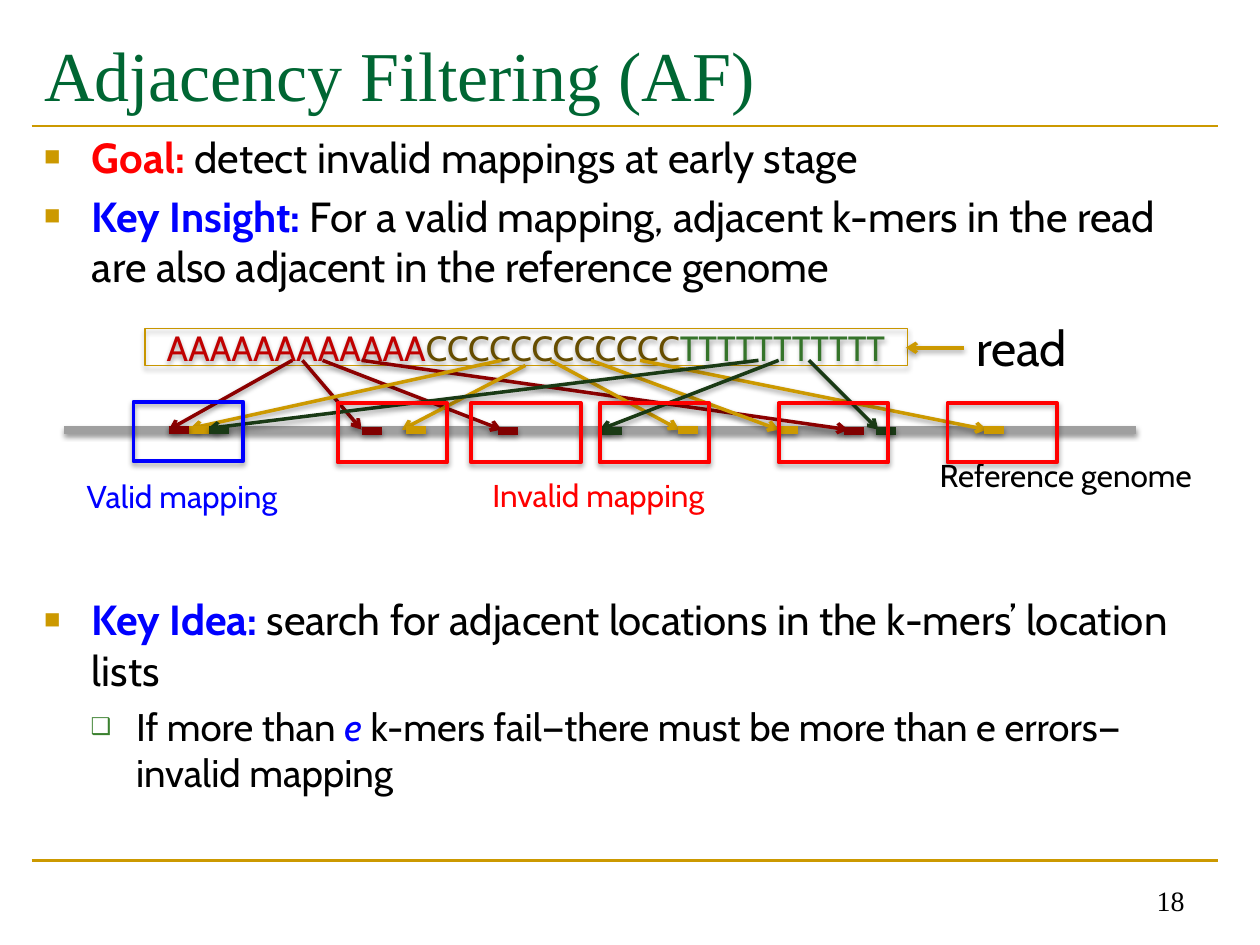
from dataclasses import dataclass

from lxml.etree import SubElement
from pptx import Presentation
from pptx.dml.color import RGBColor
from pptx.enum.shapes import MSO_CONNECTOR, MSO_SHAPE
from pptx.enum.text import MSO_ANCHOR, MSO_AUTO_SIZE, PP_ALIGN
from pptx.oxml.ns import qn
from pptx.util import Pt

EMU_PER_PX = 9144


@dataclass(frozen=True)
class Theme:
    title_font: str = "Times New Roman"
    body_font: str = "Cabin"
    title_size: float = 40
    body_size: float = 24
    sub_size: float = 22
    read_size: float = 20
    read_label_size: float = 28
    label_size: float = 18
    number_size: float = 16
    title: str = "006633"
    black: str = "000000"
    red: str = "FF0000"
    blue: str = "0000FF"
    gold: str = "CC9900"
    read_border: str = "C89600"
    gray: str = "9F9F9F"
    bullet_green: str = "3B812F"
    letter_a: str = "C00000"
    letter_c: str = "664D00"
    letter_t: str = "35742A"
    arrow_red: str = "8C0000"
    kmer_red: str = "800000"
    green: str = "1A3A15"


THEME = Theme()
BOX_WIDTH, BOX_HEIGHT = 87, 47
KMER_WIDTH = 16
GENOME_Y = 341

ARROWS = {
    THEME.arrow_red: [(232, 286, 134, 341), (240, 286, 287, 341),
                      (256, 286, 398, 341), (287, 286, 673, 341)],
    THEME.gold: [(398, 286, 151, 340), (417, 290, 319, 341), (437, 286, 539, 341),
                 (469, 286, 618, 341), (508, 286, 783, 341)],
    THEME.green: [(602, 286, 165, 340), (618, 286, 476, 341), (642, 286, 697, 341)],
}
KMERS = {
    THEME.gold: [(322, 341), (538, 341), (617, 341), (781, 341), (150, 341)],
    THEME.green: [(166, 341), (478, 342), (695, 342)],
    THEME.kmer_red: [(134, 341), (287, 342), (395, 342), (670, 342)],
}
INVALID_LEFTS = [268, 374, 476, 618, 752]


def px(*lengths):
    return [length * EMU_PER_PX for length in lengths]


def apply_format(target, values):
    for name, value in values.items():
        setattr(target, name, value)


def add_span(para, text, size, color, font=THEME.body_font, bold=False, italic=False):
    span = para.add_run()
    span.text = text
    apply_format(span.font, {"name": font, "size": Pt(size), "bold": bold, "italic": italic})
    span.font.color.rgb = RGBColor.from_string(color)


def add_effects(item, opacity=None, distance=1.6):
    effects = SubElement(item._element.spPr, qn("a:effectLst"))
    if opacity is None:
        return
    shadow = SubElement(effects, qn("a:outerShdw"), blurRad=str(Pt(3.1)),
                        dist=str(Pt(distance)), dir="5400000", rotWithShape="0")
    color = SubElement(shadow, qn("a:srgbClr"), val=THEME.black)
    SubElement(color, qn("a:alpha"), val=str(opacity * 1000))


def add_line(page, points, color, width, arrow=False, shadow=True):
    line = page.shapes.add_connector(MSO_CONNECTOR.STRAIGHT, *px(*points))
    line.line.color.rgb = RGBColor.from_string(color)
    line.line.width = Pt(width)
    if arrow:
        SubElement(line._element.spPr.find(qn("a:ln")), qn("a:tailEnd"), type="arrow")
    add_effects(line, 38 if shadow else None)


def add_frame(page, bounds, color, width):
    box = page.shapes.add_shape(MSO_SHAPE.RECTANGLE, *px(*bounds))
    box.fill.background()
    box.line.color.rgb = RGBColor.from_string(color)
    box.line.width = Pt(width)
    add_effects(box, 35, 1.8)
    return box


def add_label(page, bounds, text, size, color):
    box = page.shapes.add_textbox(*px(*bounds))
    apply_format(box.text_frame, {"word_wrap": False,
                                  "auto_size": MSO_AUTO_SIZE.SHAPE_TO_FIT_TEXT})
    add_span(box.text_frame.paragraphs[0], text, size, color)


def place(box, bounds):
    apply_format(box, dict(zip(("left", "top", "width", "height"), px(*bounds))))


def add_bullet(para, char, color, percent, indent, hanging):
    properties = para._p.get_or_add_pPr()
    left, first = px(indent, -hanging)
    properties.set("marL", str(left))
    properties.set("indent", str(first))
    bullet_color = SubElement(properties, qn("a:buClr"))
    SubElement(bullet_color, qn("a:srgbClr"), val=color)
    SubElement(properties, qn("a:buSzPct"), val=str(percent * 1000))
    SubElement(properties, qn("a:buChar"), char=char)


def fill_title(page):
    title = page.shapes.title
    place(title, (25, 17, 942, 83))
    apply_format(title.text_frame, {"vertical_anchor": MSO_ANCHOR.MIDDLE,
                                    "auto_size": MSO_AUTO_SIZE.NONE})
    para = title.text_frame.paragraphs[0]
    para.alignment = PP_ALIGN.LEFT
    add_span(para, "Adjacency Filtering (AF)", THEME.title_size, THEME.title, THEME.title_font)


def fill_body(page):
    body = page.placeholders[1]
    place(body, (25, 99, 942, 584))
    frame = body.text_frame
    apply_format(frame, {"vertical_anchor": MSO_ANCHOR.TOP, "auto_size": MSO_AUTO_SIZE.NONE})
    points = [
        ("Goal: ", THEME.red, "detect invalid mappings at early stage", 5),
        ("Key Insight: ", THEME.blue, "For a valid mapping, adjacent k-mers in the read "
         "are also adjacent in the reference genome", 5),
        ("Key Idea: ", THEME.blue,
         "search for adjacent locations in the k-mers’ location lists", 173),
    ]
    for index, (lead, color, text, gap) in enumerate(points):
        para = frame.add_paragraph() if index else frame.paragraphs[0]
        para.space_before = Pt(gap)
        add_bullet(para, "■", THEME.gold, 65, 38, 38)
        add_span(para, lead, THEME.body_size, color, bold=True)
        add_span(para, text, THEME.body_size, THEME.black)
    detail = frame.add_paragraph()
    apply_format(detail, {"level": 1, "space_before": Pt(5)})
    add_bullet(detail, "❑", THEME.bullet_green, 60, 73, 36)
    add_span(detail, "If more than ", THEME.sub_size, THEME.black)
    add_span(detail, "e ", THEME.sub_size, THEME.blue, italic=True)
    add_span(detail, "k-mers fail—there must be more than e errors—invalid mapping",
             THEME.sub_size, THEME.black)


def add_page_number(page):
    box = page.shapes.add_textbox(*px(717, 683, 233, 50))
    apply_format(box.text_frame, {"word_wrap": True, "vertical_anchor": MSO_ANCHOR.BOTTOM})
    para = box.text_frame.paragraphs[0]
    para.alignment = PP_ALIGN.RIGHT
    add_span(para, "18", THEME.number_size, THEME.black, THEME.title_font)


def add_read(page):
    box = add_frame(page, (115, 261, 605, 29), THEME.read_border, 0.75)
    margins = dict.fromkeys(("margin_left", "margin_top", "margin_right", "margin_bottom"), 0)
    apply_format(box.text_frame, {"vertical_anchor": MSO_ANCHOR.MIDDLE, **margins})
    para = box.text_frame.paragraphs[0]
    para.alignment = PP_ALIGN.CENTER
    for letter, count, color in (("A", 12, THEME.letter_a), ("C", 12, THEME.letter_c),
                                 ("T", 11, THEME.letter_t)):
        add_span(para, letter * count, THEME.read_size, color)
    add_label(page, (765, 247, 97, 57), "read", THEME.read_label_size, THEME.black)
    add_line(page, (765, 276, 719, 276), THEME.gold, 2, arrow=True)


def add_mappings(page):
    add_line(page, (51, GENOME_Y, 902, GENOME_Y), THEME.gray, 4.5)
    add_label(page, (736, 357, 228, 40), "Reference genome", THEME.label_size, THEME.black)
    for color, arrows in ARROWS.items():
        for points in arrows:
            add_line(page, points, color, 2, arrow=True)
    add_frame(page, (106, 319, BOX_WIDTH, BOX_HEIGHT), THEME.blue, 2.25)
    add_label(page, (59, 374, 177, 40), "Valid mapping", THEME.label_size, THEME.blue)
    for color, starts in KMERS.items():
        for left, top in starts:
            add_line(page, (left, top, left + KMER_WIDTH, top), color, 4.5)
    for left in INVALID_LEFTS:
        add_frame(page, (left, 320, BOX_WIDTH, BOX_HEIGHT), THEME.red, 2.25)
    add_label(page, (381, 373, 198, 40), "Invalid mapping", THEME.label_size, THEME.red)


def main():
    deck = Presentation()
    deck.slide_width, deck.slide_height = px(1000, 750)
    page = deck.slides.add_slide(deck.slide_layouts[1])
    fill_title(page)
    fill_body(page)
    for top in (100, 683):
        add_line(page, (25, top, 967, top), THEME.gold, 1.5, shadow=False)
    add_page_number(page)
    add_read(page)
    add_mappings(page)
    deck.save("out.pptx")


if __name__ == "__main__":
    main()
